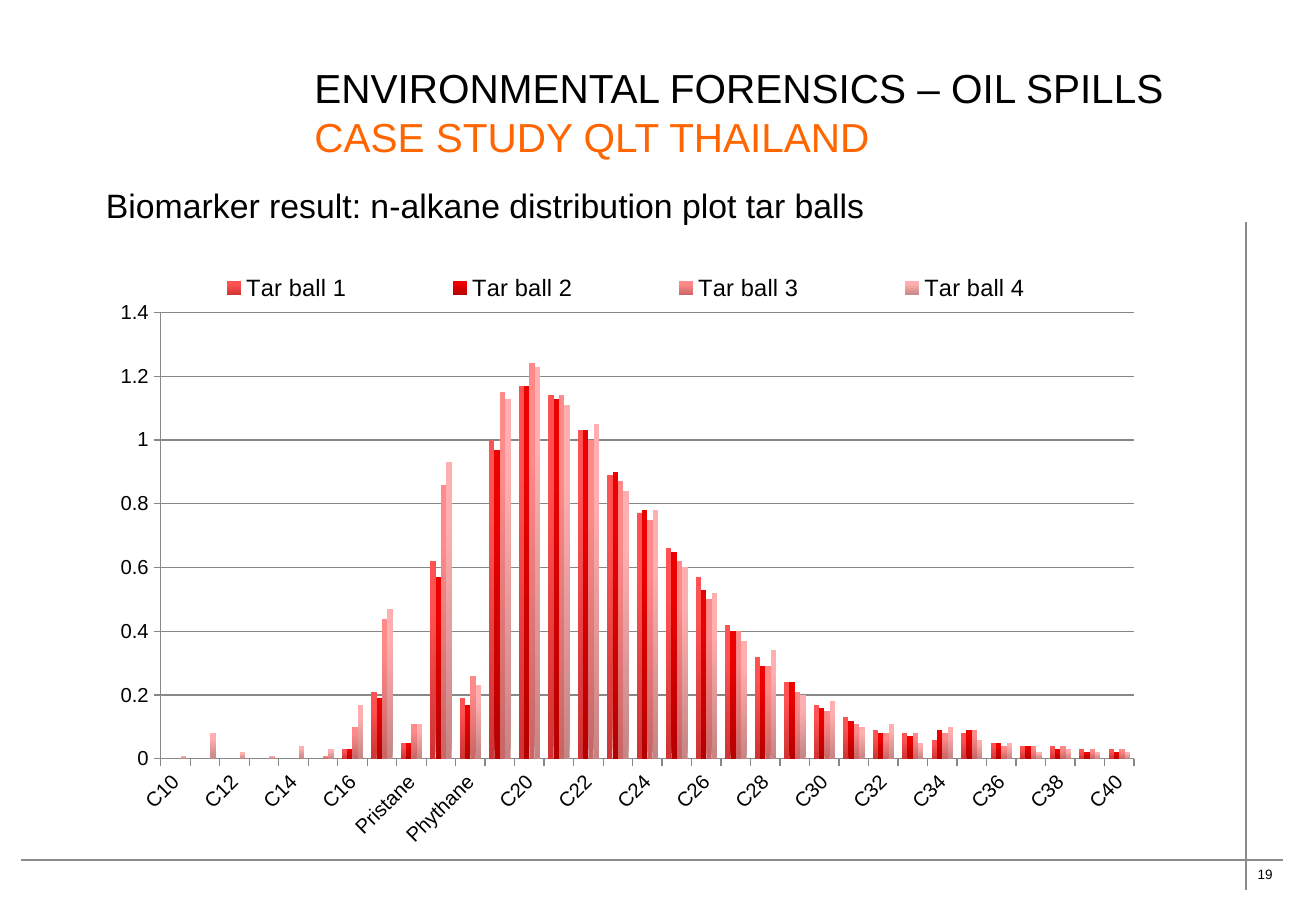
from lxml import etree
from pptx import Presentation
from pptx import util as u
from pptx.chart import data as cd
from pptx.dml.color import RGBColor
from pptx.enum import chart as ch, shapes, text
from pptx.oxml import ns

THEME = {
    "face": "Arial", "ink": "000000", "accent": "FF6600",
    "rule": "8B8B8B", "grid": "888888",
    "title": 24, "body": 20, "chart": 18, "key": 14, "axis": 12, "page": 8,
    "bars": [("D03434", "FF5353"), ("B60000", "EC0000"),
             ("CA6565", "FF8A8A"), ("C68585", "FFAFAF")],
}


def style(font, size, hue="ink"):
    look = {"name": THEME["face"], "size": u.Pt(THEME[size]), "bold": False}
    for key, val in look.items():
        setattr(font, key, val)
    font.color.rgb = RGBColor.from_string(THEME[hue])


def place(node, slot, frame, inner=False):
    for old in node.findall(ns.qn("c:layout")):
        node.remove(old)
    layout = etree.Element(ns.qn("c:layout"))
    manual = etree.SubElement(layout, ns.qn("c:manualLayout"))
    parts = [("layoutTarget", "inner")] if inner else []
    parts += [("xMode", "edge"), ("yMode", "edge"), *zip("xywh", frame)]
    for tag, val in parts:
        etree.SubElement(manual, ns.qn("c:" + tag)).set("val", str(val))
    node.insert(slot, layout)


deck = Presentation()
deck.slide_width, deck.slide_height = u.Cm(27.51), u.Cm(19.05)
slide = deck.slides.add_slide(deck.slide_layouts[1])
title, body = slide.placeholders
page = slide.shapes.add_textbox(0, 0, 0, 0)

boxes = [
    (title, (6.32, 1.07, 19.23, 2.54), text.MSO_ANCHOR.MIDDLE, True, "title",
     [("ENVIRONMENTAL FORENSICS – OIL SPILLS", "ink"),
      ("CASE STUDY QLT THAILAND", "accent")]),
    (body, (1.96, 3.73, 23.29, 13.79), text.MSO_ANCHOR.TOP, True, "body",
     [("Biomarker result: n-alkane distribution plot tar balls", "ink")]),
    (page, (26.04, 17.98, 0.86, 0.58), text.MSO_ANCHOR.TOP, False, "page",
     [("19", "ink")]),
]
for box, spot, anchor, wrap, size, lines in boxes:
    for key, val in zip(("left", "top", "width", "height"), spot):
        setattr(box, key, u.Cm(val))
    frame = box.text_frame
    form = {"auto_size": text.MSO_AUTO_SIZE.NONE, "word_wrap": wrap,
            "vertical_anchor": anchor}
    for key, val in form.items():
        setattr(frame, key, val)
    frame.text = "\n".join(line for line, hue in lines)
    for para, (line, hue) in zip(frame.paragraphs, lines):
        para.alignment = text.PP_ALIGN.LEFT
        para.space_before = u.Pt(0)
        if box is body:
            props = para._p.get_or_add_pPr()
            props.set("marL", str(u.Cm(0.97)))
            props.set("indent", str(-u.Cm(0.97)))
            etree.SubElement(props, ns.qn("a:buNone"))
        style(para.runs[0].font, size, hue)

for ends in [(0.43, 17.98, 26.82, 17.98), (26.04, 18.62, 26.04, 4.65)]:
    rule = slide.shapes.add_connector(
        shapes.MSO_CONNECTOR.STRAIGHT, *[u.Cm(end) for end in ends])
    rule.line.color.rgb = RGBColor.from_string(THEME["rule"])
    rule.line.width = u.Pt(1)
    etree.SubElement(rule._element.spPr, ns.qn("a:effectLst"))

data = cd.CategoryChartData()
data.categories = (
    [f"C{num}" for num in range(10, 18)] + ["Pristane", "C18", "Phythane"]
    + [f"C{num}" for num in range(19, 41)])
balls = [
    [0, 0, 0, 0, 0, 0, 0.03, 0.21, 0.05, 0.62, 0.19, 1, 1.17, 1.14, 1.03, 0.89,
     0.77, 0.66, 0.57, 0.42, 0.32, 0.24, 0.17, 0.13, 0.09, 0.08, 0.06, 0.08,
     0.05, 0.04, 0.04, 0.03, 0.03],
    [0, 0, 0, 0, 0, 0, 0.03, 0.19, 0.05, 0.57, 0.17, 0.97, 1.17, 1.13, 1.03,
     0.9, 0.78, 0.65, 0.53, 0.4, 0.29, 0.24, 0.16, 0.12, 0.08, 0.07, 0.09,
     0.09, 0.05, 0.04, 0.03, 0.02, 0.02],
    [0, 0, 0, 0, 0, 0.01, 0.1, 0.44, 0.11, 0.86, 0.26, 1.15, 1.24, 1.14, 1,
     0.87, 0.75, 0.62, 0.5, 0.4, 0.29, 0.21, 0.15, 0.11, 0.08, 0.08, 0.08,
     0.09, 0.04, 0.04, 0.04, 0.03, 0.03],
    [0.01, 0.08, 0.02, 0.01, 0.04, 0.03, 0.17, 0.47, 0.11, 0.93, 0.23, 1.13,
     1.23, 1.11, 1.05, 0.84, 0.78, 0.6, 0.52, 0.37, 0.34, 0.2, 0.18, 0.1,
     0.11, 0.05, 0.1, 0.06, 0.05, 0.02, 0.03, 0.02, 0.02],
]
for num, vals in enumerate(balls, 1):
    data.add_series(f"Tar ball {num}", vals)
chart = slide.shapes.add_chart(
    ch.XL_CHART_TYPE.COLUMN_CLUSTERED,
    *[u.Cm(val) for val in (1.55, 5.33, 22.61, 12.7)], data).chart
chart.has_title = False
style(chart.font, "chart")

plot = chart.plots[0]
for key, val in {"gap_width": 150, "overlap": 0,
                 "vary_by_categories": False}.items():
    setattr(plot, key, val)
for bar, hues in zip(plot.series, THEME["bars"]):
    fill = bar.format.fill
    fill.gradient()
    fill.gradient_angle = 90
    for stop, hue, spot in zip(fill.gradient_stops, hues, (0, 0.8)):
        stop.color.rgb = RGBColor.from_string(hue)
        stop.position = spot

cats, scale = chart.category_axis, chart.value_axis
for key, val in {"minimum_scale": 0, "maximum_scale": 1.4, "major_unit": 0.2,
                 "has_major_gridlines": True}.items():
    setattr(scale, key, val)
for axis in (cats, scale):
    axis.major_tick_mark = ch.XL_TICK_MARK.OUTSIDE
    style(axis.tick_labels.font, "axis")
for part in (cats, scale, scale.major_gridlines):
    part.format.line.color.rgb = RGBColor.from_string(THEME["grid"])
    part.format.line.width = u.Pt(0.75)
turn = cats._element.find(ns.qn("c:txPr")).find(ns.qn("a:bodyPr"))
turn.set("rot", "-2700000")
turn.set("vert", "horz")
skip = etree.Element(ns.qn("c:tickLblSkip"))
skip.set("val", "2")
cats._element.find(ns.qn("c:noMultiLvlLbl")).addprevious(skip)

chart.has_legend = True
key = chart.legend
key.position = ch.XL_LEGEND_POSITION.TOP
key.include_in_layout = False
style(key.font, "key")
place(key._element, 1, (0.05, 0.03, 0.92, 0.05))
place(chart._chartSpace.chart.plotArea, 0, (0.08, 0.095, 0.9, 0.735), True)

deck.save("out.pptx")
